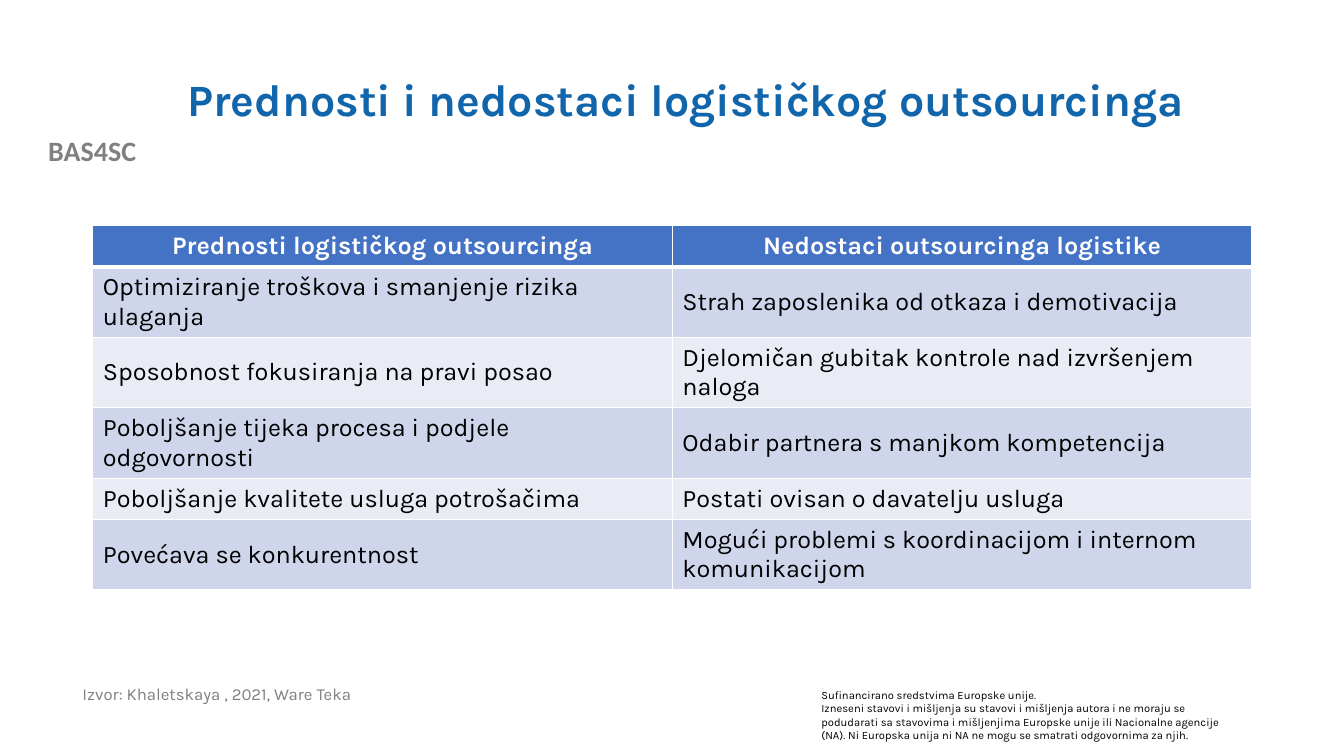
from lxml.etree import SubElement
from pptx import Presentation
from pptx.dml.color import RGBColor
from pptx.enum.text import MSO_ANCHOR as Anchor, PP_ALIGN as Align
from pptx.oxml.ns import qn
from pptx.util import Cm, Pt

WHITE, BLACK = "FFFFFF", "000000"
HEADER_BLUE, BAND_DARK, BAND_LIGHT = "4472C4", "CFD5EA", "E9EBF5"


def color(value):
    return RGBColor.from_string(value)


class SlideBuilder:
    font = "Karla"

    def __init__(self, slide):
        self.slide = slide

    def style(self, paragraph, size, hue, bold=False, font=None):
        for run in paragraph.runs:
            run.font.name = font or self.font
            run.font.size = Pt(size)
            run.font.bold = bold
            run.font.color.rgb = color(hue)

    def text(self, box, words, size, hue, bold=False, font=None,
             align=Align.LEFT, anchor=Anchor.TOP, spacing=1.0):
        frame = self.slide.shapes.add_textbox(*map(Cm, box)).text_frame
        frame.word_wrap = True
        frame.vertical_anchor = anchor
        frame.text = words
        for paragraph in frame.paragraphs:
            paragraph.alignment = align
            paragraph.line_spacing = spacing
            self.style(paragraph, size, hue, bold, font)

    def borders(self, cell, bottom):
        properties = cell._tc.get_or_add_tcPr()
        widths = {"a:lnL": 1, "a:lnR": 1, "a:lnT": 1, "a:lnB": bottom}
        for position, (side, width) in enumerate(widths.items()):
            line = SubElement(properties, qn(side), w=str(Pt(width)))
            fill = SubElement(line, qn("a:solidFill"))
            SubElement(fill, qn("a:srgbClr"), val=WHITE)
            properties.insert(position, line)

    def table(self, left, top, width, row_height, rows):
        grid = self.slide.shapes.add_table(
            len(rows), len(rows[0]), Cm(left), Cm(top),
            Cm(width), Cm(row_height * len(rows))).table
        for r, row in enumerate(rows):
            header = r == 0
            band = HEADER_BLUE if header else (BAND_LIGHT, BAND_DARK)[r % 2]
            for c, words in enumerate(row):
                cell = grid.cell(r, c)
                cell.text = words
                cell.vertical_anchor = Anchor.MIDDLE
                cell.fill.solid()
                cell.fill.fore_color.rgb = color(band)
                self.borders(cell, bottom=3 if header else 1)
                paragraph = cell.text_frame.paragraphs[0]
                paragraph.alignment = Align.CENTER if header else Align.LEFT
                self.style(paragraph, 18, WHITE if header else BLACK, header)


def main():
    deck = Presentation()
    deck.slide_width, deck.slide_height = Cm(33.87), Cm(19.05)
    page = SlideBuilder(deck.slides.add_slide(deck.slide_layouts[6]))

    # Project name and funding note
    page.text((0, 3.25, 4.65, 1.12), "BAS4SC", 20, "808080", bold=True,
              font="Calibri", align=Align.CENTER)
    page.text((20.45, 17.22, 11.1, 1.63),
              "Sufinancirano sredstvima Europske unije.\n"
              "Izneseni stavovi i mišljenja su stavovi i mišljenja autora i ne "
              "moraju se podudarati sa stavovima i mišljenjima Europske unije "
              "ili Nacionalne agencije (NA). Ni Europska unija ni NA ne mogu se "
              "smatrati odgovornima za njih.", 8, BLACK)

    # Title and source
    page.text((4.47, 1.02, 27.08, 3.1),
              "Prednosti i nedostaci logističkog outsourcinga", 32, "1065AB",
              bold=True, anchor=Anchor.MIDDLE, spacing=0.9)
    page.text((1.83, 17.17, 12.73, 1.32),
              "Izvor: Khaletskaya , 2021, Ware Teka", 12, "7F7F7F", spacing=0.9)

    # Advantages and drawbacks
    page.table(2.34, 5.69, 29.21, 1.03, [
        ("Prednosti logističkog outsourcinga",
         "Nedostaci outsourcinga logistike"),
        ("Optimiziranje troškova i smanjenje rizika ulaganja",
         "Strah zaposlenika od otkaza i demotivacija"),
        ("Sposobnost fokusiranja na pravi posao",
         "Djelomičan gubitak kontrole nad izvršenjem naloga"),
        ("Poboljšanje tijeka procesa i podjele odgovornosti",
         "Odabir partnera s manjkom kompetencija"),
        ("Poboljšanje kvalitete usluga potrošačima",
         "Postati ovisan o davatelju usluga"),
        ("Povećava se konkurentnost",
         "Mogući problemi s koordinacijom i internom komunikacijom"),
    ])

    deck.save("out.pptx")


if __name__ == "__main__":
    main()
